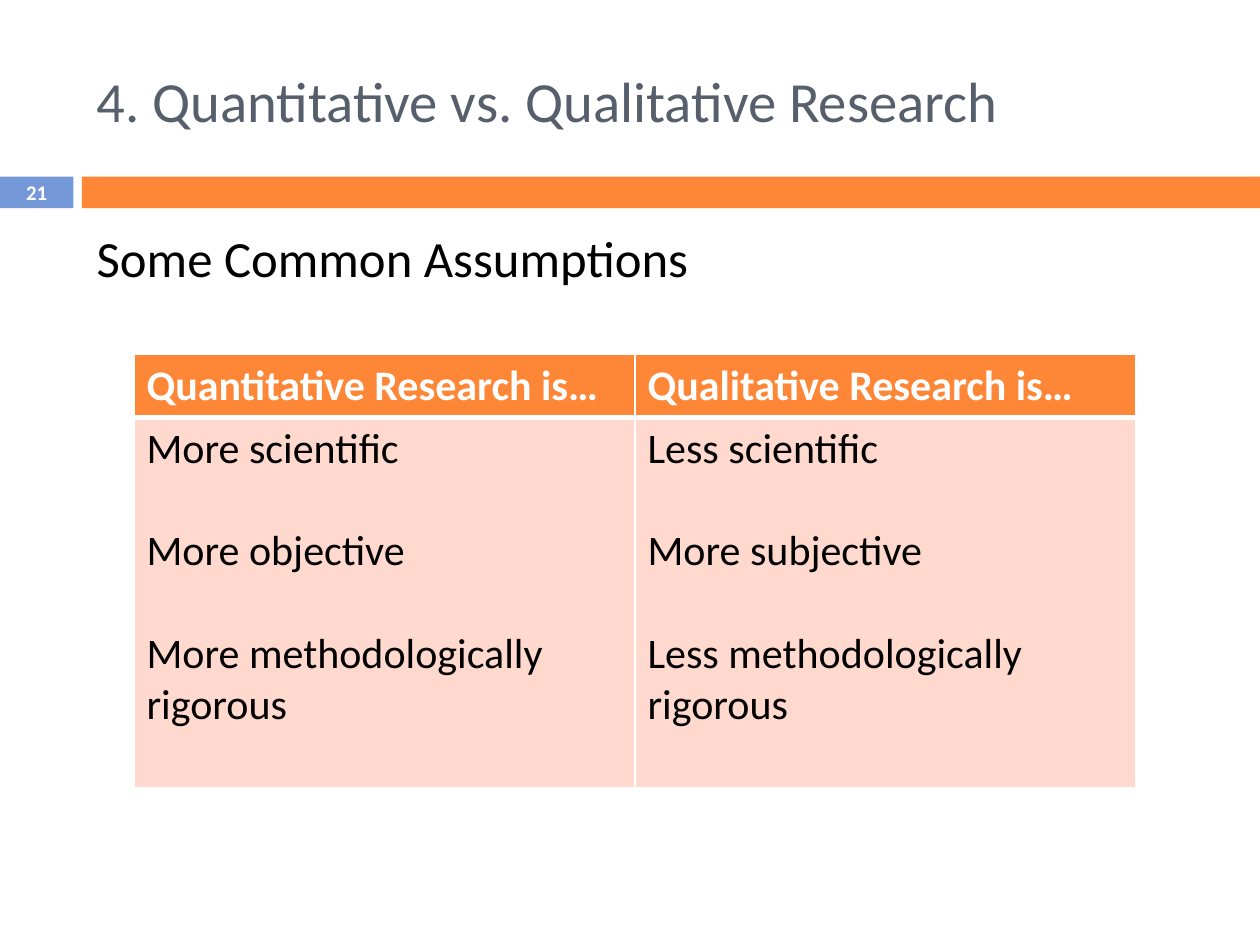
import pptx
import pptx.dml.color
import pptx.enum.shapes
import pptx.enum.text
import pptx.oxml
import pptx.oxml.ns
import pptx.util
from pptx.util import Cm

COLORS = {
    "orange": "FE8637",
    "blue": "7598D9",
    "slate": "575F6D",
    "peach": "FFD9CE",
    "white": "FFFFFF",
    "black": "000000",
}
ASSUMPTIONS = {
    "Quantitative Research is…": [
        "More scientific", "More objective", "More methodologically rigorous"],
    "Qualitative Research is…": [
        "Less scientific", "More subjective", "Less methodologically rigorous"],
}


def rgb(name):
    """Return the palette colour of that name."""
    return pptx.dml.color.RGBColor.from_string(COLORS[name])


def write(frame, *lines, size, color="black", bold=False, align="LEFT", before=0, gap=0):
    """Fill a text frame with one paragraph per line."""
    frame.word_wrap = True
    for index, line in enumerate(lines):
        paragraph = frame.add_paragraph() if index else frame.paragraphs[0]
        paragraph.alignment = getattr(pptx.enum.text.PP_ALIGN, align)
        paragraph.space_before = pptx.util.Pt(gap if index else before)
        run = paragraph.add_run()
        run.text = line
        run.font.name = "Calibri"
        run.font.size = pptx.util.Pt(size)
        run.font.bold = bold
        run.font.color.rgb = rgb(color)


def add_heading(slide, left, top, width, height, text, anchor, **style):
    """Place a text box with the given vertical anchor."""
    frame = slide.shapes.add_textbox(left, top, width, height).text_frame
    frame.vertical_anchor = getattr(pptx.enum.text.MSO_ANCHOR, anchor)
    write(frame, text, **style)


def add_band(slide, left, top, width, height, number):
    """Place the page number tab and the orange bar beside it."""
    tab_width, bar_offset = Cm(1.48), Cm(1.65)
    for x, part_width, color in (
        (left, tab_width, "blue"),
        (left + bar_offset, width - bar_offset, "orange"),
    ):
        band = slide.shapes.add_shape(
            pptx.enum.shapes.MSO_SHAPE.RECTANGLE, x, top, part_width, height)
        band.shadow.inherit = False
        band.fill.solid()
        band.fill.fore_color.rgb = rgb(color)
        band.line.fill.background()
    add_heading(slide, left, top, tab_width, height, number, "MIDDLE",
                size=11.9, color="white", bold=True, align="CENTER")


def style_cell(cell, fill, top, bottom):
    """Give a cell its fill and white borders, with widths in points."""
    cell.fill.solid()
    cell.fill.fore_color.rgb = rgb(fill)
    properties = cell._tc.get_or_add_tcPr()
    for index, (side, width) in enumerate(
            (("L", 1), ("R", 1), ("T", top), ("B", bottom))):
        properties.insert(index, pptx.oxml.parse_xml(
            f'<a:ln{side} {pptx.oxml.ns.nsdecls("a")} w="{pptx.util.Pt(width)}">'
            f'<a:solidFill><a:srgbClr val="{COLORS["white"]}"/></a:solidFill></a:ln{side}>'))


def add_assumptions(slide, left, top, width, height):
    """Place the table with one column for each research type."""
    table = slide.shapes.add_table(2, len(ASSUMPTIONS), left, top, width, height).table
    header_height = Cm(1.27)
    table.rows[0].height = header_height
    table.rows[1].height = height - header_height
    for column, (research, claims) in enumerate(ASSUMPTIONS.items()):
        header, body = table.cell(0, column), table.cell(1, column)
        style_cell(header, "orange", top=1, bottom=3)
        style_cell(body, "peach", top=3, bottom=1)
        write(header.text_frame, research, size=24, color="white", bold=True)
        write(body.text_frame, *claims, size=24, gap=29.3)


def main():
    """Build and save the slide."""
    deck = pptx.Presentation()
    deck.slide_width, deck.slide_height = Cm(25.4), Cm(19.05)
    slide = deck.slides.add_slide(deck.slide_layouts[6])
    margin, text_width = Cm(1.7), Cm(22.66)
    add_band(slide, 0, Cm(3.56), deck.slide_width, Cm(0.64), "21")
    add_heading(slide, margin, Cm(0.64), text_width, Cm(2.74),
                "4. Quantitative vs. Qualitative Research", "MIDDLE",
                size=32.4, color="slate")
    add_heading(slide, margin, Cm(4.45), text_width, Cm(12.5),
                "Some Common Assumptions", "TOP", size=29, before=7)
    add_assumptions(slide, Cm(2.7), Cm(7.14), Cm(20.2), Cm(8.74))
    deck.save("out.pptx")


if __name__ == "__main__":
    main()
